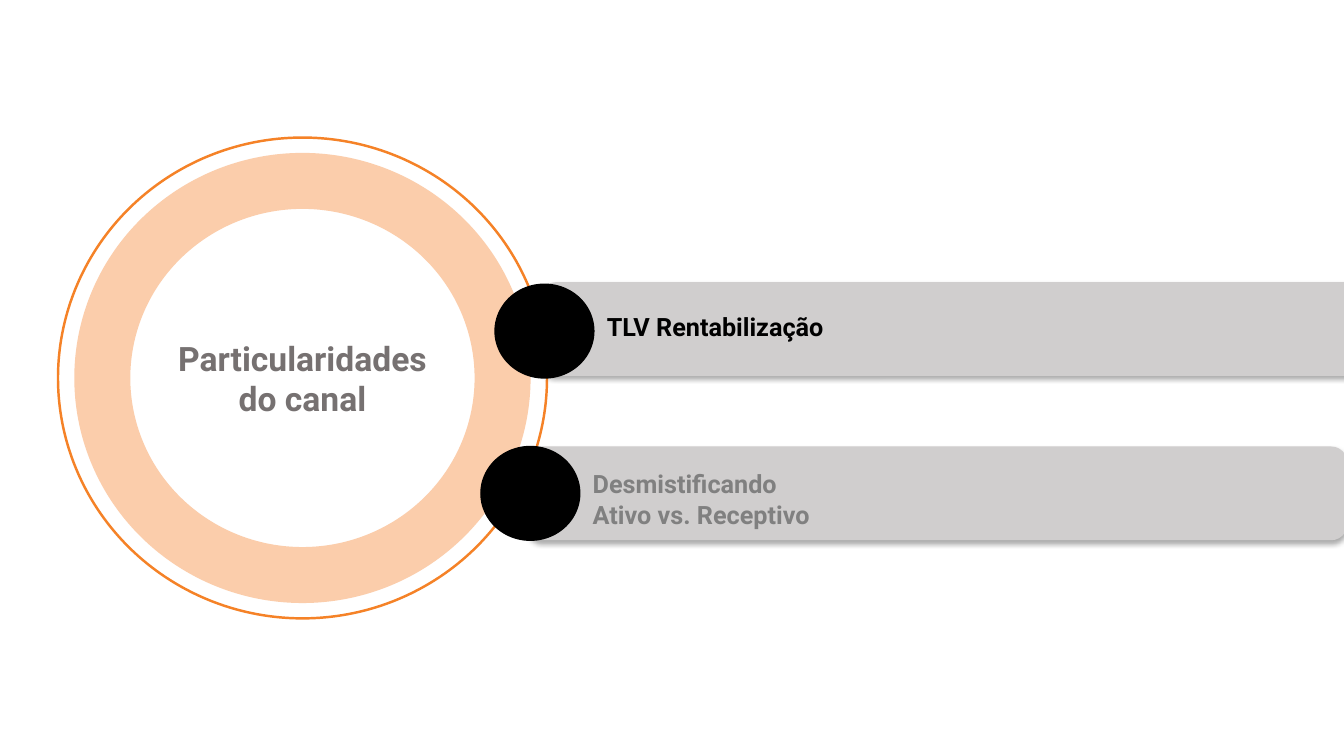
"""Build the slide on the channel's particularities."""
from lxml import etree
from pptx import Presentation
from pptx.dml.color import RGBColor
from pptx.enum.shapes import MSO_SHAPE
from pptx.enum.text import MSO_ANCHOR, MSO_AUTO_SIZE, PP_ALIGN
from pptx.oxml.ns import qn
from pptx.util import Inches, Pt

OVAL, ROUND = MSO_SHAPE.OVAL, MSO_SHAPE.ROUNDED_RECTANGLE
TOP, NONE = MSO_ANCHOR.TOP, MSO_AUTO_SIZE.NONE
LEFT, CENTER = PP_ALIGN.LEFT, PP_ALIGN.CENTER

TITLE = "Particularidades do canal"
TOPICS = [
    {"lines": ["TLV Rentabilização"], "ink": "black", "bar": (5.36, 2.8),
     "dot": 2.82, "text": (3.04, 10.78, 0.4)},
    {"lines": ["Desmistificando", "Ativo vs. Receptivo"], "ink": "gray",
     "bar": (5.22, 4.43), "dot": 4.43, "text": (4.6, 11.3, 0.71)},
]
RINGS = [(3.97, 3.91, "peach", 40), (4.85, 4.77, "orange", 1.75)]
HUB = (3.0, 3.75)
BAR = (8.14, 0.93)
DOT = (0.98, 0.93)
THEME = {
    "font": "Roboto",
    "size": {"title": 24, "topic": 18},
    "color": {"peach": "FBCDAB", "orange": "F58227", "slate": "767171",
              "silver": "D0CECE", "black": "000000", "gray": "808080"},
    "shade": {"blur": 3.5, "dist": 2.2, "angle": 90, "alpha": 32},
}


def tone(name):
    """Return a theme colour."""
    return RGBColor.from_string(THEME["color"][name])


def shape(slide, kind, box, fill=None, line=None, width=1):
    """Add a preset shape with the given fill and line."""
    item = slide.shapes.add_shape(kind, *map(Inches, box))
    item.shadow.inherit = False
    if fill:
        item.fill.solid()
        item.fill.fore_color.rgb = tone(fill)
    else:
        item.fill.background()
    if line:
        item.line.color.rgb = tone(line)
        item.line.width = Pt(width)
    else:
        item.line.fill.background()
    return item


def shade(item):
    """Give a shape the soft shadow of the theme."""
    look = THEME["shade"]
    effects = item._element.spPr.find(qn("a:effectLst"))
    outer = etree.SubElement(
        effects, qn("a:outerShdw"), blurRad=str(Pt(look["blur"])),
        dist=str(Pt(look["dist"])), dir=str(look["angle"] * 60000),
        algn="t", rotWithShape="0")
    color = etree.SubElement(outer, qn("a:srgbClr"), val=THEME["color"]["black"])
    etree.SubElement(color, qn("a:alpha"), val=str(look["alpha"] * 1000))


def write(item, lines, ink, size, align):
    """Set and format the paragraphs of a text box."""
    frame = item.text_frame
    frame.text = "\n".join(lines)
    form = {"word_wrap": True, "auto_size": NONE, "vertical_anchor": TOP}
    for key, value in form.items():
        setattr(frame, key, value)
    look = {"name": THEME["font"], "size": Pt(THEME["size"][size]), "bold": True}
    for para in frame.paragraphs:
        para.alignment = align
        for run in para.runs:
            for key, value in look.items():
                setattr(run.font, key, value)
            run.font.color.rgb = tone(ink)


def main():
    """Compose and save the slide."""
    deck = Presentation()
    deck.slide_width, deck.slide_height = Inches(13.33), Inches(7.5)
    slide = deck.slides.add_slide(deck.slide_layouts[5])

    for wide, high, line, width in RINGS:
        box = (HUB[0] - wide / 2, HUB[1] - high / 2, wide, high)
        shape(slide, OVAL, box, line=line, width=width)

    title = slide.shapes.title
    place = {"left": 1.58, "top": 3.3, "width": 2.84, "height": 0.91}
    for key, value in place.items():
        setattr(title, key, Inches(value))
    write(title, [TITLE], "slate", "title", CENTER)

    for topic in TOPICS:
        left, top = topic["bar"]
        shade(shape(slide, ROUND, (left, top, *BAR), fill="silver"))
        shape(slide, OVAL, (left - 0.45, topic["dot"], *DOT), "black", "black")
        label = slide.shapes.add_textbox(
            *map(Inches, (left + 0.56, *topic["text"])))
        write(label, topic["lines"], topic["ink"], "topic", LEFT)

    deck.save("out.pptx")


if __name__ == "__main__":
    main()
